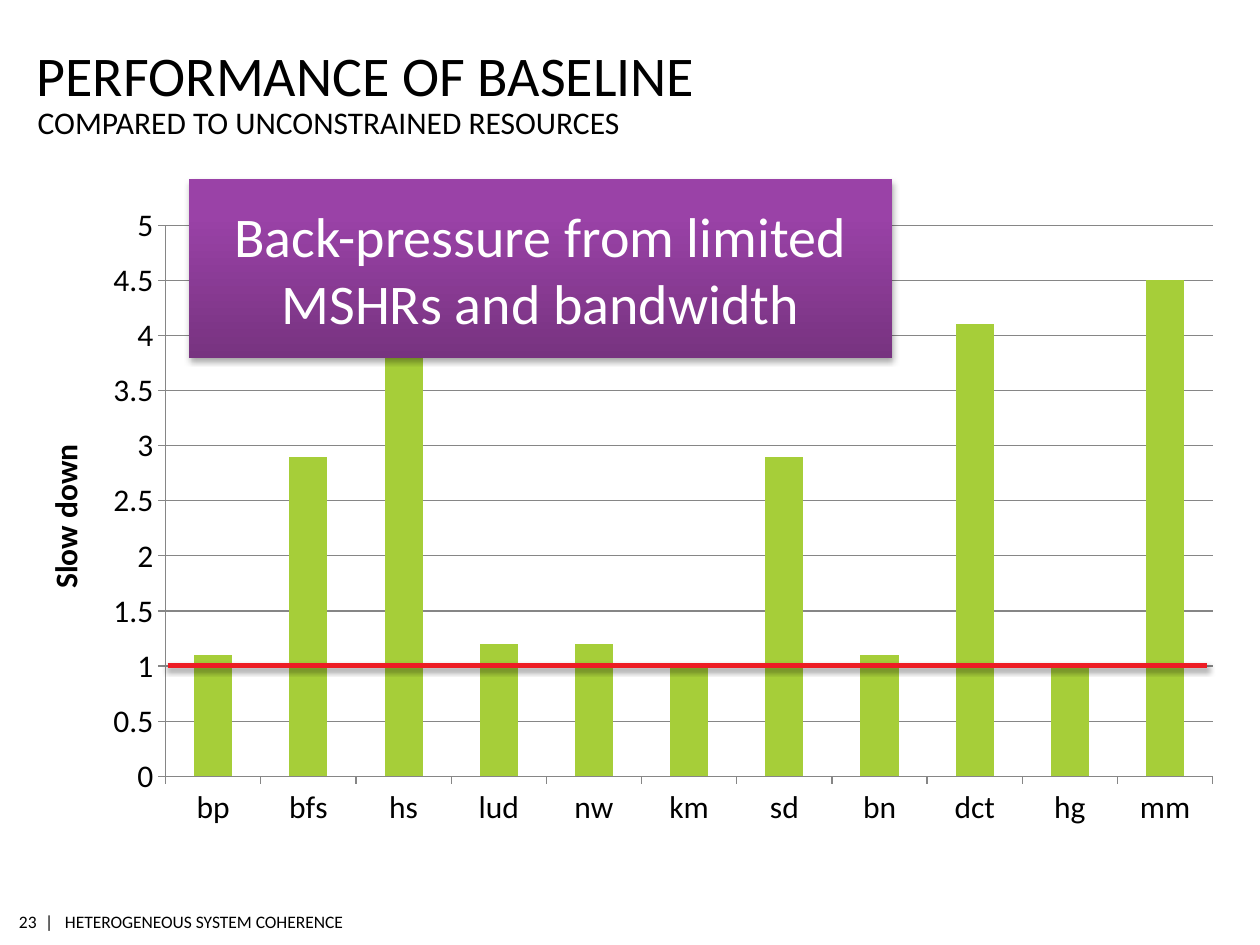
"""Build the baseline performance slide with a slow-down column chart."""
import copy
from dataclasses import dataclass

import lxml.etree
import pptx
import pptx.chart.data
import pptx.dml.color
import pptx.enum.chart
import pptx.enum.shapes
import pptx.enum.text
import pptx.oxml
import pptx.oxml.ns
import pptx.util

Cm = pptx.util.Cm
Pt = pptx.util.Pt
RGB = pptx.dml.color.RGBColor.from_string
qn = pptx.oxml.ns.qn
ALIGN = pptx.enum.text.PP_ALIGN
ANCHOR = pptx.enum.text.MSO_ANCHOR


@dataclass
class Theme:
    font: str = "Calibri"
    text: str = "000000"
    white: str = "FFFFFF"
    bar: str = "A6CE39"
    grid: str = "868686"
    baseline: str = "ED1C24"
    callout: tuple = ((0, "773380"), (0.8, "9A42A7"), (1, "9C40A9"))
    title_size: int = 32
    body_size: int = 18
    footer_size: int = 10


theme = Theme()


def put_text(tf, text, size, color=theme.text, align=ALIGN.LEFT, anchor=ANCHOR.MIDDLE,
             insets=(0, 0, 0, 0), wrap=True):
    tf.auto_size = pptx.enum.text.MSO_AUTO_SIZE.NONE
    tf.word_wrap = wrap
    tf.vertical_anchor = anchor
    tf.margin_left, tf.margin_top, tf.margin_right, tf.margin_bottom = map(Cm, insets)
    p = tf.paragraphs[0]
    p.alignment = align
    p.space_before = Pt(0)
    r = p.add_run()
    r.text = text
    r.font.name = theme.font
    r.font.size = Pt(size)
    r.font.bold = False
    r.font.color.rgb = RGB(color)


def add_shadow(sp):
    sp.shadow.inherit = False
    effects = sp._element.spPr.find(qn("a:effectLst"))
    shadow = lxml.etree.SubElement(effects, qn("a:outerShdw"), blurRad="40000",
                                   dist="23000", dir="5400000", rotWithShape="0")
    color = lxml.etree.SubElement(shadow, qn("a:srgbClr"), val="000000")
    lxml.etree.SubElement(color, qn("a:alpha"), val="35000")


prs = pptx.Presentation()
prs.slide_width, prs.slide_height = Cm(25.4), Cm(19.05)
s = prs.slides.add_slide(prs.slide_layouts[2])

title, body = s.placeholders
title.left, title.top, title.width, title.height = Cm(0.74), Cm(0.86), Cm(21.34), Cm(1.32)
put_text(title.text_frame, "PERFORMANCE OF BASELINE", theme.title_size,
         anchor=ANCHOR.BOTTOM, insets=(0, 0.13, 0, 0))
body.left, body.top, body.width, body.height = Cm(0.76), Cm(2.08), Cm(21.34), Cm(0.79)
put_text(body.text_frame, "COMPARED TO UNCONSTRAINED RESOURCES", theme.body_size,
         anchor=ANCHOR.TOP)

for text, left, width, align in (
    ("|   HETEROGENEOUS SYSTEM COHERENCE", 0.91, 6.58, ALIGN.LEFT),
    ("23", 0.33, 0.41, ALIGN.RIGHT),
):
    sp = s.shapes.add_textbox(Cm(left), Cm(18.24), Cm(width), Cm(0.66))
    put_text(sp.text_frame, text, theme.footer_size, align=align,
             insets=(0, 0.1, 0, 0.1), wrap=False)

data = pptx.chart.data.CategoryChartData()
data.categories = ["bp", "bfs", "hs", "lud", "nw", "km", "sd", "bn", "dct", "hg", "mm"]
data.add_series("Series 1", (1.1, 2.9, 3.8, 1.2, 1.2, 1, 2.9, 1.1, 4.1, 1, 4.5))
chart = s.shapes.add_chart(pptx.enum.chart.XL_CHART_TYPE.COLUMN_CLUSTERED,
                           Cm(0.76), Cm(3.84), Cm(23.88), Cm(13.72), data).chart
chart.has_legend = False
chart.has_title = False
chart.font.name = theme.font
chart.font.size = Pt(theme.body_size)
chart.font.color.rgb = RGB(theme.text)

plot = chart.plots[0]
plot.gap_width = 150
plot.vary_by_categories = False
fill = plot.series[0].format.fill
fill.solid()
fill.fore_color.rgb = RGB(theme.bar)

val_axis = chart.value_axis
val_axis.minimum_scale, val_axis.maximum_scale, val_axis.major_unit = 0, 5, 0.5
val_axis.tick_labels.number_format = "General"
val_axis.tick_labels.number_format_is_linked = False
val_axis.has_major_gridlines = True
for axis in (val_axis, chart.category_axis):
    axis.major_tick_mark = pptx.enum.chart.XL_TICK_MARK.OUTSIDE
for part in (val_axis, chart.category_axis, val_axis.major_gridlines):
    part.format.line.color.rgb = RGB(theme.grid)
    part.format.line.width = Pt(0.75)

p = val_axis.axis_title.text_frame.paragraphs[0]
r = p.add_run()
r.text = "Slow down"
r.font.name = theme.font
r.font.size = Pt(theme.body_size)
r.font.bold = True
r.font.color.rgb = RGB(theme.text)

plot_area = chart._chartSpace.chart.plotArea
for old in plot_area.findall(qn("c:layout")):
    plot_area.remove(old)
layout = lxml.etree.Element(qn("c:layout"))
manual = lxml.etree.SubElement(layout, qn("c:manualLayout"))
for tag, val in (("layoutTarget", "inner"), ("xMode", "edge"), ("yMode", "edge"),
                 ("x", "0.108"), ("y", "0.051"), ("w", "0.884"), ("h", "0.81")):
    lxml.etree.SubElement(manual, qn(f"c:{tag}"), val=val)
plot_area.insert(0, layout)

line = s.shapes.add_connector(pptx.enum.shapes.MSO_CONNECTOR.STRAIGHT,
                              Cm(3.38), Cm(13.41), Cm(24.33), Cm(13.41))
line.line.color.rgb = RGB(theme.baseline)
line.line.width = Pt(3)
add_shadow(line)

callout = s.shapes.add_shape(pptx.enum.shapes.MSO_SHAPE.LINE_CALLOUT_1_ACCENT_BAR,
                             Cm(3.81), Cm(3.61), Cm(14.17), Cm(3.61))
for i, value in enumerate((0.72, 1.05, 0.53, 1.48)):
    callout.adjustments[i] = value
callout.fill.gradient()
callout.fill.gradient_angle = 90
stops = callout._element.spPr.find(qn("a:gradFill")).find(qn("a:gsLst"))
stops.append(copy.deepcopy(stops[-1]))
for stop, (position, color) in zip(callout.fill.gradient_stops, theme.callout):
    stop.position = position
    stop.color.rgb = RGB(color)
callout.line.fill.background()
add_shadow(callout)
put_text(callout.text_frame, "Back-pressure from limited MSHRs and bandwidth",
         theme.title_size, color=theme.white, align=ALIGN.CENTER,
         insets=(0.25, 0.13, 0.25, 0.13))

prs.save("out.pptx")
